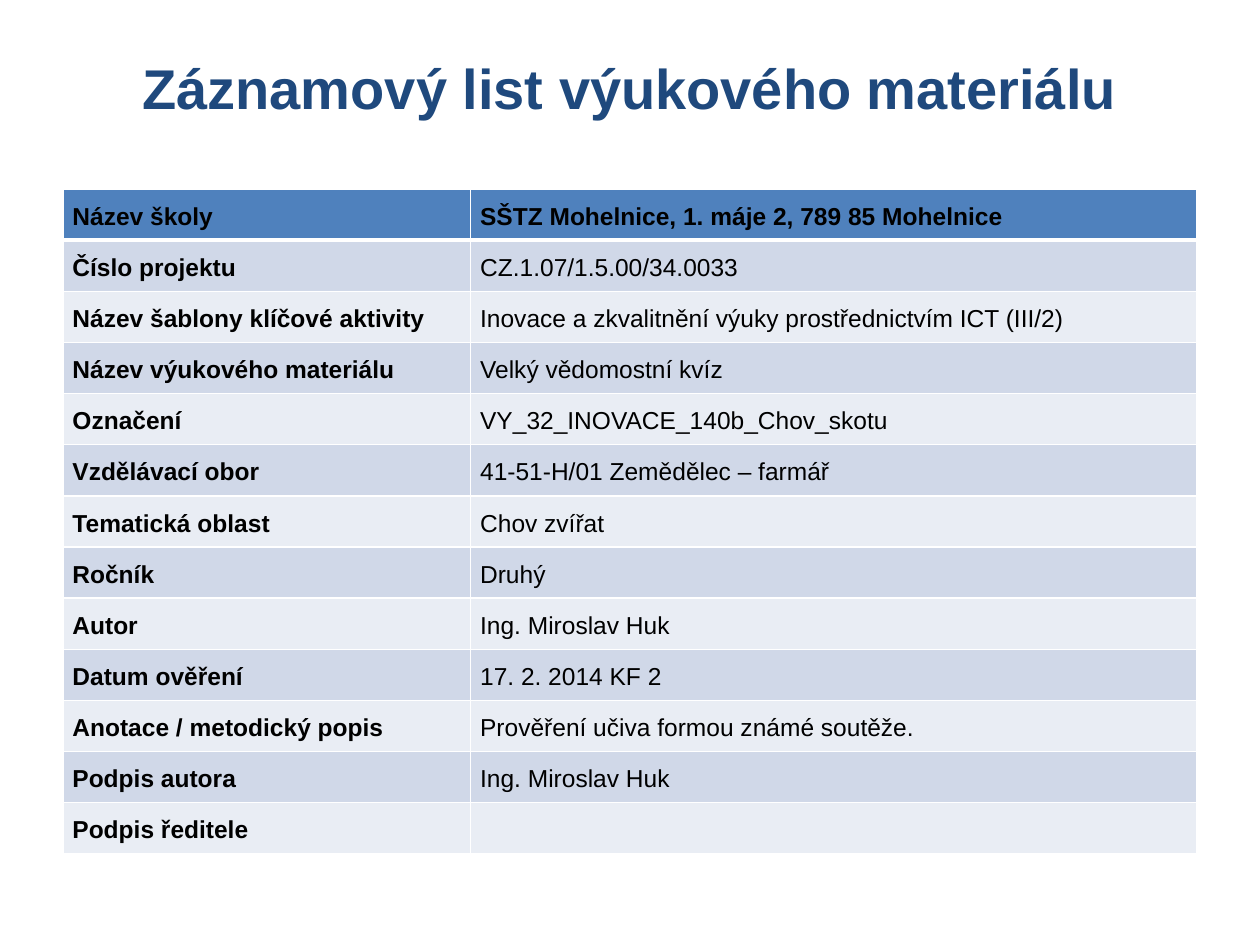
from pptx import Presentation
from pptx.dml.color import RGBColor
from pptx.enum.text import MSO_ANCHOR, PP_ALIGN
from pptx.oxml.ns import qn
from pptx.util import Pt
from lxml import etree

MIDDLE = MSO_ANCHOR.MIDDLE
CENTER = PP_ALIGN.CENTER
TITLE_ONLY = 5

# Content
TITLE = "Záznamový list výukového materiálu"
RECORD = [
    ("Název školy", "SŠTZ Mohelnice, 1. máje 2, 789 85 Mohelnice"),
    ("Číslo projektu", "CZ.1.07/1.5.00/34.0033"),
    ("Název šablony klíčové aktivity",
     "Inovace a zkvalitnění výuky prostřednictvím ICT (III/2)"),
    ("Název výukového materiálu", "Velký vědomostní kvíz"),
    ("Označení", "VY_32_INOVACE_140b_Chov_skotu"),
    ("Vzdělávací obor", "41-51-H/01 Zemědělec – farmář"),
    ("Tematická oblast", "Chov zvířat"),
    ("Ročník", "Druhý"),
    ("Autor", "Ing. Miroslav Huk"),
    ("Datum ověření", "17. 2. 2014 KF 2"),
    ("Anotace / metodický popis", "Prověření učiva formou známé soutěže."),
    ("Podpis autora", "Ing. Miroslav Huk"),
    ("Podpis ředitele", ""),
]

THEME = {
    "font": "Arial",
    "title_size": 32, "title_color": "1F497D",
    "text_size": 14, "text_color": "000000",
    "header": "4F81BD", "bands": ("E9EDF4", "D0D8E8"),
    "border": "FFFFFF", "thin": 1, "thick": 3,
}

# Layout in points
LEFT, WIDTH = 36, 648
TITLE_TOP, TITLE_HEIGHT = 21.6, 56.2
TABLE_TOP, TABLE_HEIGHT = 108, 380
COLUMN_WIDTHS = (233, 415)
CELL_MARGIN = 5.4


def style_font(font, size, color, bold):
    font.name = THEME["font"]
    font.size = Pt(size)
    font.bold = bold
    font.color.rgb = RGBColor.from_string(color)


def set_borders(cell, widths):
    properties = cell._tc.get_or_add_tcPr()
    for side, width in widths.items():
        line = etree.SubElement(properties, qn(f"a:ln{side}"), w=str(Pt(width)))
        fill = etree.SubElement(line, qn("a:solidFill"))
        etree.SubElement(fill, qn("a:srgbClr"), val=THEME["border"])


def fill_cell(cell, text, row, column):
    thin, thick = THEME["thin"], THEME["thick"]
    set_borders(cell, {
        "L": thin, "R": thin,
        "T": thick if row == 1 else thin,
        "B": thick if row == 0 else thin,
    })
    color = THEME["header"] if row == 0 else THEME["bands"][row % 2]
    cell.fill.solid()
    cell.fill.fore_color.rgb = RGBColor.from_string(color)
    cell.vertical_anchor = MIDDLE
    cell.margin_left = cell.margin_right = Pt(CELL_MARGIN)
    cell.margin_top = cell.margin_bottom = 0
    cell.text = text
    para = cell.text_frame.paragraphs[0]
    para.line_spacing = 1.15
    style_font(para.font, THEME["text_size"], THEME["text_color"],
               row == 0 or column == 0)


def add_title(page):
    title = page.shapes.title
    title.left, title.top = Pt(LEFT), Pt(TITLE_TOP)
    title.width, title.height = Pt(WIDTH), Pt(TITLE_HEIGHT)
    title.text_frame.text = TITLE
    title.text_frame.vertical_anchor = MIDDLE
    para = title.text_frame.paragraphs[0]
    para.alignment = CENTER
    style_font(para.font, THEME["title_size"], THEME["title_color"], True)


def add_record_table(page):
    table = page.shapes.add_table(
        len(RECORD), len(COLUMN_WIDTHS),
        Pt(LEFT), Pt(TABLE_TOP), Pt(WIDTH), Pt(TABLE_HEIGHT)).table
    for column, width in zip(table.columns, COLUMN_WIDTHS):
        column.width = Pt(width)
    for row, texts in enumerate(RECORD):
        for column, text in enumerate(texts):
            fill_cell(table.cell(row, column), text, row, column)


def main():
    deck = Presentation()
    deck.slide_width, deck.slide_height = Pt(720), Pt(540)
    page = deck.slides.add_slide(deck.slide_layouts[TITLE_ONLY])
    add_title(page)
    add_record_table(page)
    deck.save("out.pptx")


if __name__ == "__main__":
    main()
